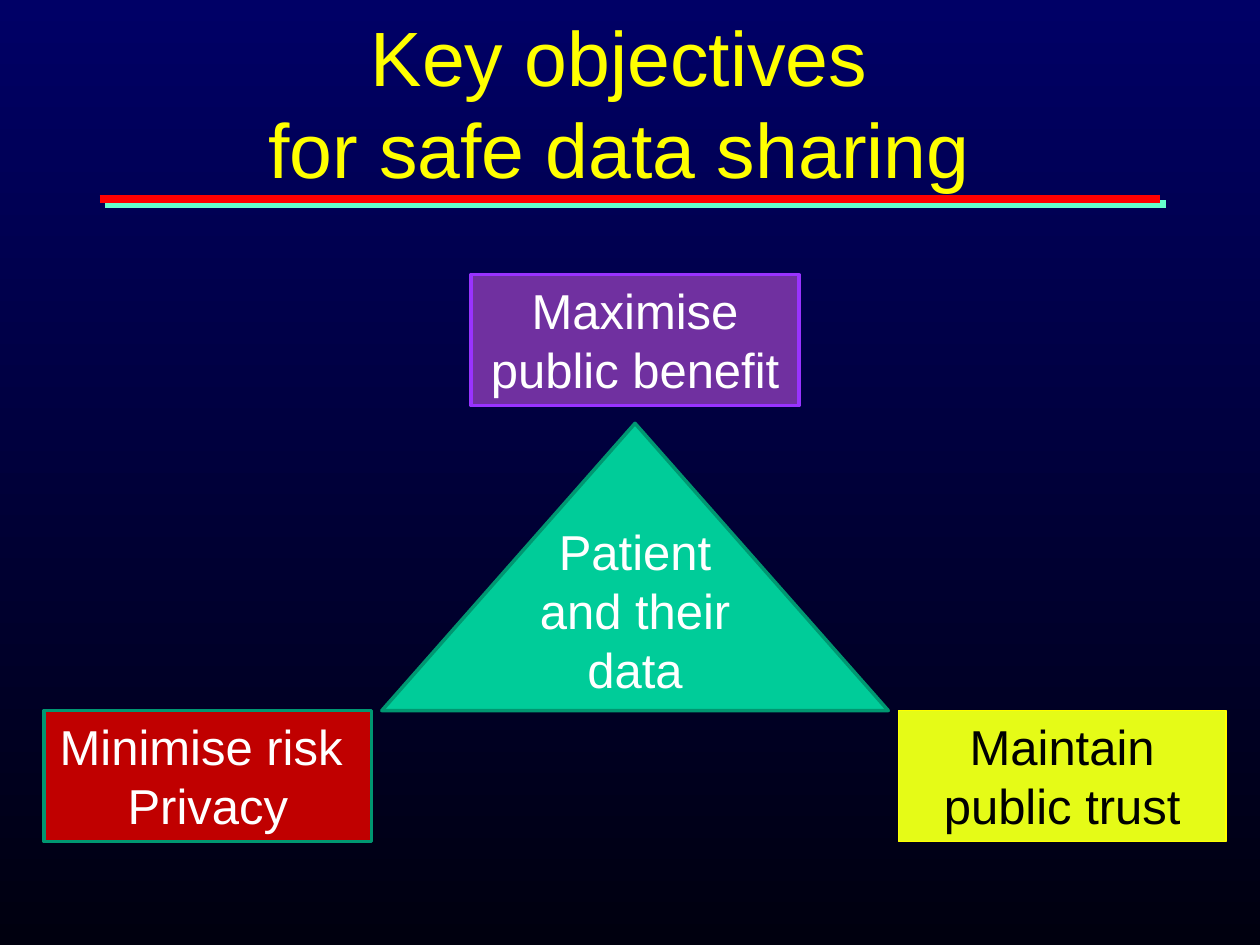
import pptx
import pptx.dml.color
import pptx.enum.dml
import pptx.enum.shapes
import pptx.enum.text
import pptx.oxml
import pptx.oxml.ns
import pptx.util
from dataclasses import dataclass

Inches = pptx.util.Inches
Pt = pptx.util.Pt
Shape = pptx.enum.shapes.MSO_SHAPE
Anchor = pptx.enum.text.MSO_ANCHOR


@dataclass(frozen=True)
class Theme:
    font: str = "Arial"
    title_size: int = 44
    body_size: int = 28
    sky_top: str = "000066"
    sky_bottom: str = "00000F"
    title: str = "FFFF00"
    rule: str = "FF0000"
    rule_shadow: str = "66FFCC"
    white: str = "FFFFFF"
    black: str = "000000"
    green: str = "00CC99"
    green_edge: str = "009771"
    red: str = "C00000"
    purple: str = "7030A0"
    purple_edge: str = "9933FF"
    lime: str = "E5FB17"
    lime_edge: str = "FFFF00"


THEME = Theme()


def rgb(value):
    return pptx.dml.color.RGBColor.from_string(value)


def paint_background(slide):
    fill = slide.background.fill
    fill.gradient()
    fill.gradient_angle = 270
    for stop, colour in zip(fill.gradient_stops, (THEME.sky_top, THEME.sky_bottom)):
        stop.color.rgb = rgb(colour)


def write_text(shape, paragraphs, size, colour, anchor):
    frame = shape.text_frame
    frame.word_wrap = True
    frame.vertical_anchor = anchor
    frame.text = "\n".join(paragraphs)
    formats = {"name": THEME.font, "size": Pt(size)}
    for paragraph in frame.paragraphs:
        paragraph.alignment = pptx.enum.text.PP_ALIGN.CENTER
        for run in paragraph.runs:
            for attribute, value in formats.items():
                setattr(run.font, attribute, value)
            run.font.color.rgb = rgb(colour)


def add_title(slide, text):
    title = slide.shapes.add_textbox(Inches(0.79), Inches(0.18), Inches(8.42), Inches(1.25))
    write_text(title, [text], THEME.title_size, THEME.title, Anchor.MIDDLE)


def add_title_rule(slide):
    rule = slide.shapes.add_connector(
        pptx.enum.shapes.MSO_CONNECTOR.STRAIGHT,
        Inches(0.79), Inches(1.58), Inches(9.21), Inches(1.58))
    rule.line.color.rgb = rgb(THEME.rule)
    rule.line.width = Pt(4.5)
    # Solid offset shadow, 4.2 pt down to the right
    rule._element.spPr.append(pptx.oxml.parse_xml(
        f'<a:effectLst {pptx.oxml.ns.nsdecls("a")}>'
        f'<a:outerShdw dist="{Pt(4.2)}" dir="2700000" algn="ctr" rotWithShape="0">'
        f'<a:srgbClr val="{THEME.rule_shadow}"/></a:outerShdw></a:effectLst>'))


def add_panel(slide, kind, place, paragraphs, fill, edge, text=THEME.white,
              edge_width=2, anchor=Anchor.TOP):
    panel = slide.shapes.add_shape(kind, *map(Inches, place))
    panel.shadow.inherit = False
    panel.fill.solid()
    panel.fill.fore_color.rgb = rgb(fill)
    panel.line.color.rgb = rgb(edge)
    panel.line.width = Pt(edge_width)
    write_text(panel, paragraphs, THEME.body_size, text, anchor)
    return panel


def main():
    deck = pptx.Presentation()
    deck.slide_width, deck.slide_height = Inches(10), Inches(7.5)
    slide = deck.slides.add_slide(deck.slide_layouts[6])
    paint_background(slide)

    # Heading
    add_title_rule(slide)
    add_title(slide, "Key objectives \vfor safe data sharing ")

    # Central triangle, its text raised by one line
    patient = add_panel(slide, Shape.ISOSCELES_TRIANGLE, (3.03, 3.36, 4.02, 2.28),
                        ["Patient and their data"], THEME.green, THEME.green_edge,
                        anchor=Anchor.MIDDLE)
    patient.text_frame.margin_bottom = Inches(0.51)

    # One objective at each corner
    box_size = (2.6, 1.04)
    base = 5.64
    add_panel(slide, Shape.RECTANGLE, (0.35, base, *box_size),
              ["Minimise risk ", "Privacy"], THEME.red, THEME.green_edge)
    add_panel(slide, Shape.RECTANGLE, (3.74, 2.18, *box_size),
              ["Maximise public benefit"], THEME.purple, THEME.purple_edge)
    add_panel(slide, Shape.RECTANGLE, (7.13, base, *box_size),
              ["Maintain public trust"], THEME.lime, THEME.lime_edge,
              text=THEME.black, edge_width=0.75)

    deck.save("out.pptx")


if __name__ == "__main__":
    main()
